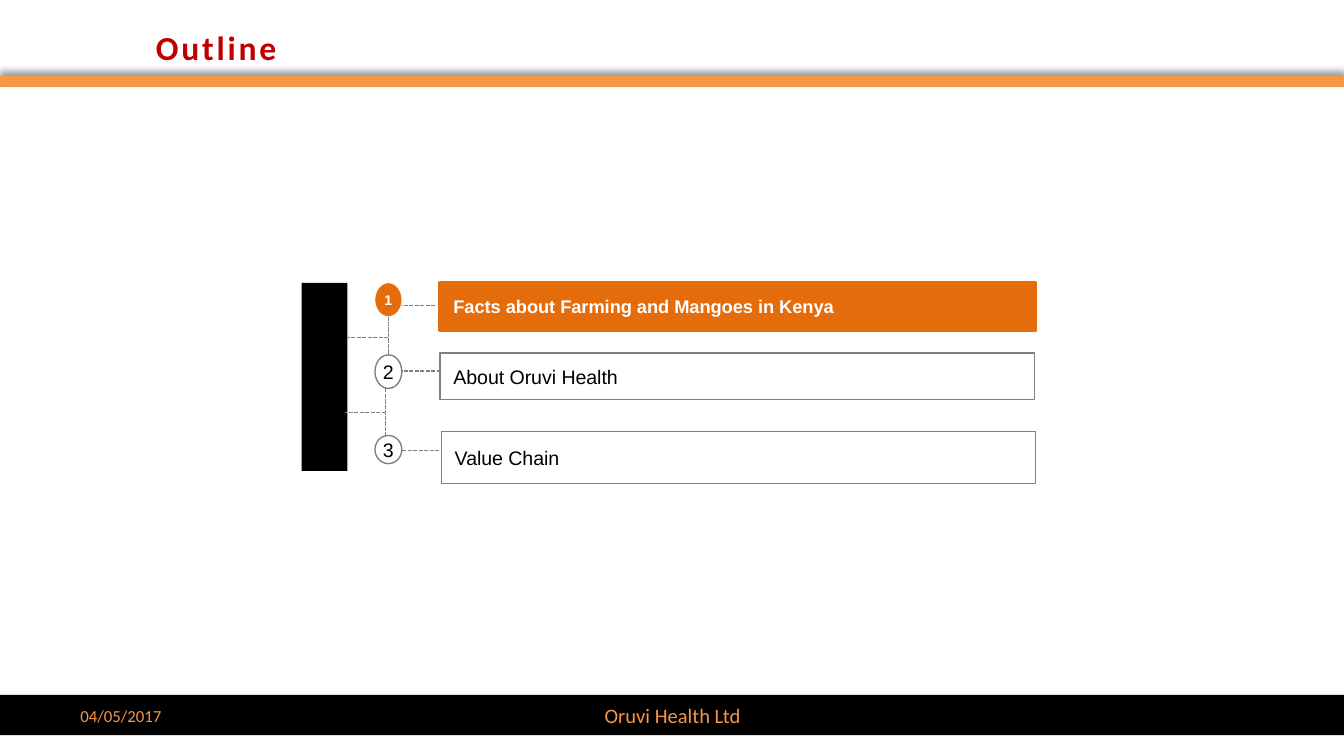
from dataclasses import dataclass

from lxml import etree
from pptx import Presentation
from pptx import util as u
from pptx.dml.color import RGBColor
from pptx.enum import dml, shapes, text
from pptx.oxml.ns import qn

PX = 4572  # EMU per px, 200 px to the inch


@dataclass(frozen=True)
class Theme:
    heading: str = "Calibri"
    body: str = "Arial"
    title: RGBColor = RGBColor(0xC0, 0x00, 0x00)
    accent: RGBColor = RGBColor(0xF7, 0x96, 0x46)
    active: RGBColor = RGBColor(0xE4, 0x6C, 0x0A)
    grey: RGBColor = RGBColor(0x80, 0x80, 0x80)
    black: RGBColor = RGBColor(0, 0, 0)
    white: RGBColor = RGBColor(0xFF, 0xFF, 0xFF)
    title_size: float = 18
    footer_size: float = 11
    date_size: float = 9
    item_size: float = 10.5
    active_size: float = 9.75
    active_number_size: float = 7.5


theme = Theme()
prs = Presentation()
prs.slide_width, prs.slide_height = 2000 * PX, 1125 * PX
slide = prs.slides.add_slide(prs.slide_layouts[5])


def write(holder, words, font, size, color, align=text.PP_ALIGN.LEFT, bold=False,
          anchor=text.MSO_ANCHOR.MIDDLE):
    frame = holder.text_frame
    frame.text = words
    frame.word_wrap = True
    frame.auto_size = text.MSO_AUTO_SIZE.NONE
    frame.vertical_anchor = anchor
    paragraph = frame.paragraphs[0]
    paragraph.alignment = align
    paragraph.font.name, paragraph.font.size = font, u.Pt(size)
    paragraph.font.color.rgb, paragraph.font.bold = color, bold
    return frame


def draw(kind, box, fill, line=None, width=0.75):
    """Add a flat preset shape; box is left, top, width, height in px."""
    shape = slide.shapes.add_shape(kind, *(v * PX for v in box))
    shape.shadow.inherit = False
    shape.fill.solid()
    shape.fill.fore_color.rgb = fill
    if line is None:
        shape.line.fill.background()
    else:
        shape.line.color.rgb, shape.line.width = line, u.Pt(width)
    return shape


RECT, OVAL = shapes.MSO_SHAPE.RECTANGLE, shapes.MSO_SHAPE.OVAL
STRAIGHT = shapes.MSO_CONNECTOR.STRAIGHT

# Header rule, with a soft shadow cast upwards
rule = slide.shapes.add_connector(STRAIGHT, 0, 121 * PX, 2000 * PX, 121 * PX)
rule.line.color.rgb, rule.line.width = theme.accent, u.Pt(6)
effects = etree.SubElement(rule._element.spPr, qn("a:effectLst"))
shadow = etree.SubElement(effects, qn("a:outerShdw"), blurRad=str(u.Pt(4)),
                          dist=str(u.Pt(3)), dir="16200000", rotWithShape="0")
shadow_color = etree.SubElement(shadow, qn("a:srgbClr"), val="000000")
etree.SubElement(shadow_color, qn("a:alpha"), val="40000")

# Title
title = slide.shapes.title
title.left, title.top, title.width, title.height = (v * PX for v in (212, 50, 1170, 60))
heading = write(title, "Outline", theme.heading, theme.title_size, theme.title,
                bold=True, anchor=text.MSO_ANCHOR.BOTTOM)
heading.paragraphs[0].runs[0].font._element.set("spc", "150")

# Footer
draw(RECT, (0, 1034, 2000, 60), theme.black)
for words, left, width, size, align in [
    ("04/05/2017", 100, 466, theme.date_size, text.PP_ALIGN.LEFT),
    ("Oruvi Health Ltd", 684, 634, theme.footer_size, text.PP_ALIGN.CENTER),
]:
    footer = slide.shapes.add_textbox(left * PX, 1035 * PX, width * PX, 60 * PX)
    write(footer, words, theme.heading, size, theme.accent, align)

# Spine with dashed branches to the numbered items
draw(RECT, (449, 421, 68, 280), theme.black)
for ends in [
    (578, 430, 578, 528), (574, 578, 574, 676),  # between numbers
    (578, 502, 518, 502), (574, 614, 514, 614),  # to the spine
    (648, 455, 588, 455), (656, 552, 598, 552), (654, 670, 598, 670),  # to the items
]:
    branch = slide.shapes.add_connector(STRAIGHT, *(v * PX for v in ends))
    branch.line.color.rgb, branch.line.width = theme.grey, u.Pt(0.75)
    branch.line.dash_style = dml.MSO_LINE.SQUARE_DOT
    branch.line._ln.find(qn("a:prstDash")).set("val", "sysDash")
    etree.SubElement(branch._element.spPr, qn("a:effectLst"))

# Agenda items; the first one is the current section
agenda = [
    ("Facts about Farming and Mangoes in Kenya", (421, 50), (655, 421, 886, 70)),
    ("About Oruvi Health", (528, 50), (655, 525, 884, 70)),
    ("Value Chain", (648, 42), (657, 642, 884, 78)),
]
for number, (topic, (dot_top, dot_height), bar_box) in enumerate(agenda, 1):
    current = number == 1
    fill = theme.active if current else theme.white
    ink = theme.white if current else theme.black
    bar = draw(RECT, bar_box, fill,
               theme.active if current else theme.grey, 2 if current else 0.75)
    write(bar, topic, theme.body, theme.active_size if current else theme.item_size,
          ink, bold=current)
    dot = draw(OVAL, (558, dot_top, 40, dot_height), fill,
               theme.white if current else theme.grey, 0.25 if current else 0.75)
    label = write(dot, str(number), theme.body,
                  theme.active_number_size if current else theme.item_size,
                  ink, text.PP_ALIGN.CENTER, current)
    label.word_wrap = False
    label.margin_left = label.margin_right = label.margin_top = label.margin_bottom = 0

prs.save("out.pptx")
